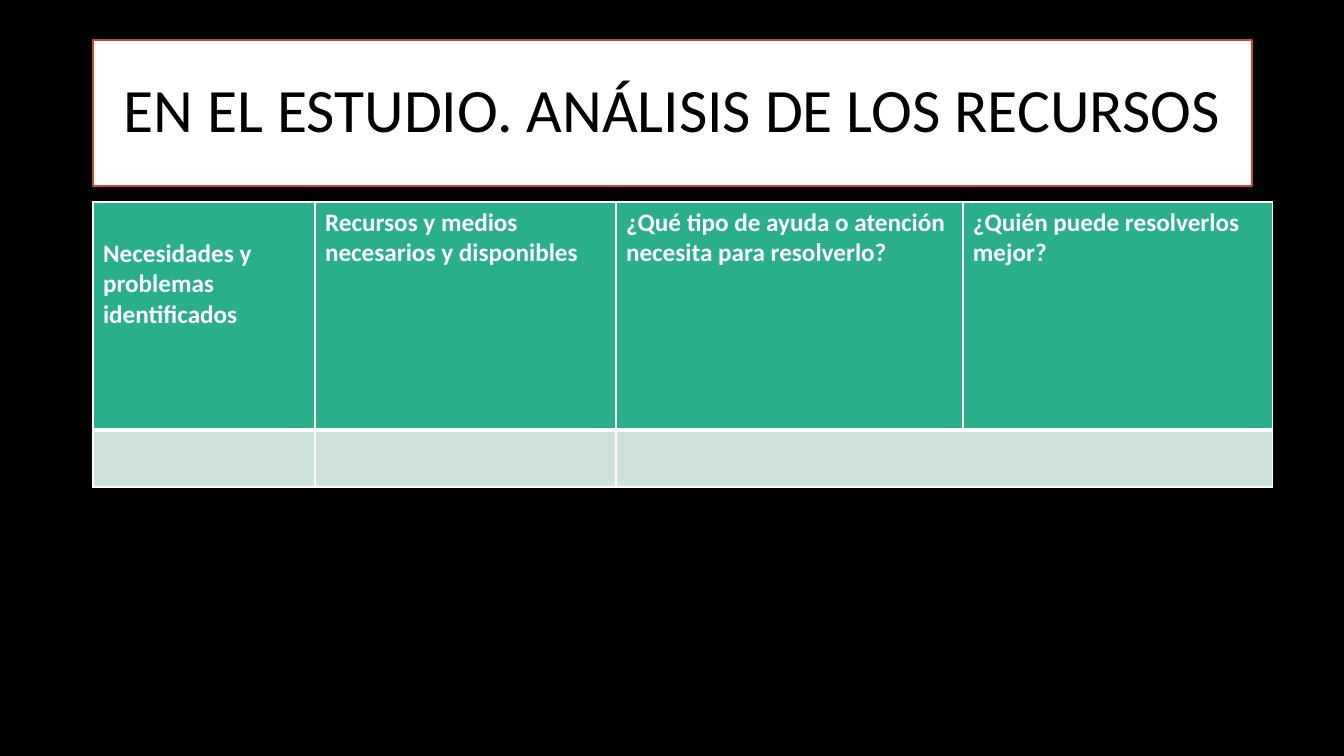
import pptx
import pptx.dml.color
import pptx.enum.text
import pptx.oxml.ns
import pptx.util
from lxml import etree

RGB = pptx.dml.color.RGBColor
BLACK = RGB(0x00, 0x00, 0x00)
WHITE = RGB(0xFF, 0xFF, 0xFF)
ORANGE = RGB(0xC9, 0x49, 0x2C)
GREEN = RGB(0x29, 0xAF, 0x8C)
PALE_GREEN = RGB(0xCD, 0xE3, 0xDA)

FONT = "Calibri"
LEFT = 93
COLUMNS = [222, 301, 347, 310]
ROWS = [228, 57]
HEADERS = [
    "Necesidades y problemas identificados",
    "Recursos y medios necesarios y disponibles",
    "¿Qué tipo de ayuda o atención necesita para resolverlo?",
    "¿Quién puede resolverlos mejor?",
]


def px(n):
    return pptx.util.Emu(round(n * 914400 / 100.8))


def style_text(p, size, color, bold=False):
    for r in p.runs:
        r.font.name = FONT
        r.font.size = pptx.util.Pt(size)
        r.font.bold = bold
        r.font.color.rgb = color


def set_title(slide, text):
    sp = slide.shapes.title
    sp.left, sp.top, sp.width, sp.height = px(LEFT), px(40), px(1159), px(146)
    sp.fill.solid()
    sp.fill.fore_color.rgb = WHITE
    sp.line.color.rgb = ORANGE
    sp.line.width = pptx.util.Pt(1)
    tf = sp.text_frame
    tf.text = text
    tf.word_wrap = True
    tf.vertical_anchor = pptx.enum.text.MSO_ANCHOR.MIDDLE
    p = tf.paragraphs[0]
    p.alignment = pptx.enum.text.PP_ALIGN.CENTER
    p.line_spacing = 0.9
    style_text(p, 44, BLACK)


def style_cell(cell, fill, top=1, bottom=1):
    # Borders come before the fill in the cell properties
    qn = pptx.oxml.ns.qn
    tcPr = cell._tc.get_or_add_tcPr()
    for side, width in zip("LRTB", (1, 1, top, bottom)):
        ln = etree.SubElement(tcPr, qn("a:ln" + side), w=str(pptx.util.Pt(width)))
        solid = etree.SubElement(ln, qn("a:solidFill"))
        etree.SubElement(solid, qn("a:srgbClr"), val=str(WHITE))
    cell.fill.solid()
    cell.fill.fore_color.rgb = fill


def add_resource_table(slide):
    frame = slide.shapes.add_table(len(ROWS), len(COLUMNS), px(LEFT), px(202),
                                   px(sum(COLUMNS)), px(sum(ROWS)))
    table = frame.table
    for column, width in zip(table.columns, COLUMNS):
        column.width = px(width)
    for row, height in zip(table.rows, ROWS):
        row.height = px(height)

    # Header row above an empty row
    for i, text in enumerate(HEADERS):
        header, blank = table.cell(0, i), table.cell(1, i)
        header.text_frame.text = text
        style_text(header.text_frame.paragraphs[0], 18, WHITE, bold=True)
        style_cell(header, GREEN, bottom=3)
        style_cell(blank, PALE_GREEN, top=3)

    # The first header starts one line lower
    table.cell(0, 0).margin_top = px(36)
    table.cell(1, 2).merge(table.cell(1, 3))


def main():
    prs = pptx.Presentation()
    prs.slide_width, prs.slide_height = px(1344), px(756)
    slide = prs.slides.add_slide(prs.slide_layouts[5])
    slide.background.fill.solid()
    slide.background.fill.fore_color.rgb = BLACK
    set_title(slide, "EN EL ESTUDIO. ANÁLISIS DE LOS RECURSOS")
    add_resource_table(slide)
    prs.save("out.pptx")


if __name__ == "__main__":
    main()
